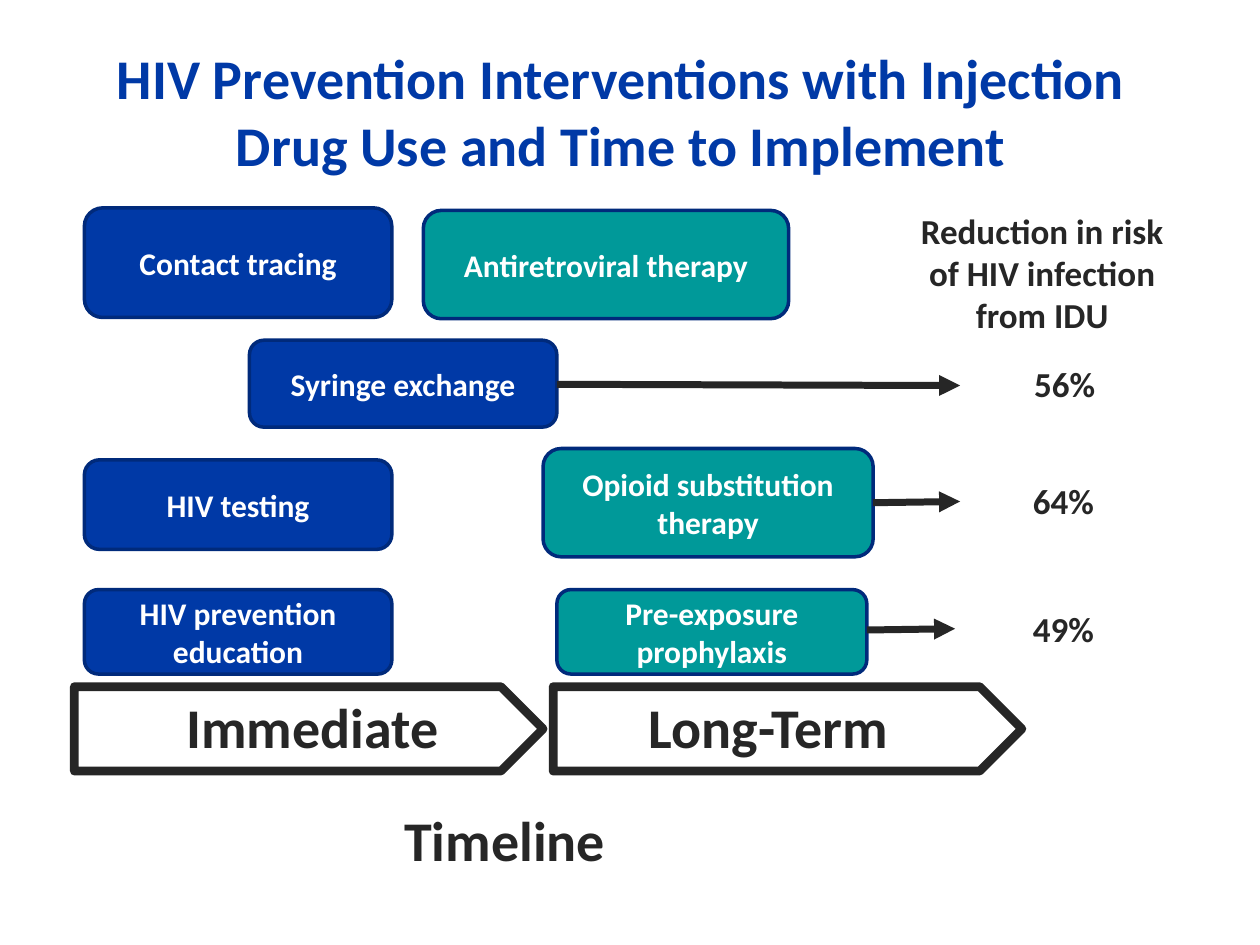
from typing import NamedTuple

from lxml.etree import SubElement
from pptx import Presentation
from pptx.dml.color import RGBColor
from pptx.enum.shapes import MSO_CONNECTOR, MSO_SHAPE
from pptx.enum.text import MSO_ANCHOR, MSO_AUTO_SIZE, PP_ALIGN
from pptx.oxml.ns import qn
from pptx.util import Inches, Pt

BLUE = RGBColor(0x00, 0x39, 0xA6)
NAVY = RGBColor(0x00, 0x2A, 0x7B)
TEAL = RGBColor(0x00, 0x99, 0x99)
DARK = RGBColor(0x26, 0x26, 0x26)
WHITE = RGBColor(0xFF, 0xFF, 0xFF)
FONT = "Calibri"

# The slide is a grid of 100 columns by 75 rows of square cells.
COLS, ROWS = 100, 75
WIDTH, HEIGHT = Inches(10), Inches(7.5)
CELL = WIDTH / COLS


class Area(NamedTuple):
    col: float
    row: float
    cols: float
    rows: float


class Card(NamedTuple):
    text: str
    area: Area
    fill: RGBColor


class Stage(NamedTuple):
    text: str
    col: float
    label: Area


class Effect(NamedTuple):
    """A risk reduction and the arrow that leads to it."""
    text: str
    area: Area
    start: tuple[float, float]
    end: tuple[float, float]


LEFT, WIDE = 6.7, 24.4
CARDS = [
    Card("Syringe exchange", Area(19.8, 27, WIDE, 6.9), BLUE),
    Card("HIV testing", Area(LEFT, 36.5, WIDE, 7.1), BLUE),
    Card("Contact tracing", Area(LEFT, 16.5, WIDE, 8.7), BLUE),
    Card("HIV prevention education", Area(LEFT, 46.8, WIDE, 6.7), BLUE),
    Card("Pre-exposure prophylaxis", Area(44.2, 46.8, 24.6, 6.7), TEAL),
    Card("Antiretroviral therapy", Area(33.6, 16.7, 29, 8.6), TEAL),
    Card("Opioid substitution therapy", Area(43.1, 35.6, 26.2, 8.6), TEAL),
]
STAGE_ROW = 54.5
STAGES = [
    Stage("Immediate", 5.9, Area(13.8, STAGE_ROW, 22.2, 6.4)),
    Stage("Long-Term", 43.9, Area(50.5, STAGE_ROW, 21.6, 6.4)),
]
EFFECTS = [
    Effect("56%", Area(81.1, 28.3, 7.6, 4.4), (44.2, 30.5), (76.2, 30.6)),
    Effect("64%", Area(81, 37.6, 7.6, 4.4), (69.3, 39.9), (76.2, 39.8)),
    Effect("49%", Area(81, 47.7, 7.6, 4.4), (68.8, 50), (75.8, 49.9)),
]


def span(*cells: float) -> list[int]:
    return [round(cell * CELL) for cell in cells]


def write(shape, *lines: str, size: int, color: RGBColor = DARK,
          aligns=(PP_ALIGN.CENTER,), anchor=MSO_ANCHOR.MIDDLE,
          wrap: bool = True) -> None:
    """Fill a shape with bold lines; the last alignment serves the rest."""
    frame = shape.text_frame
    frame.word_wrap = wrap
    frame.vertical_anchor = anchor
    if not wrap:
        frame.auto_size = MSO_AUTO_SIZE.SHAPE_TO_FIT_TEXT
    for i, line in enumerate(lines):
        para = frame.add_paragraph() if i else frame.paragraphs[0]
        para.alignment = aligns[min(i, len(aligns) - 1)]
        run = para.add_run()
        run.text = line
        font = run.font
        font.name, font.size, font.bold = FONT, Pt(size), True
        font.color.rgb = color


def label(slide, area: Area, *lines: str, size: int,
          aligns=(PP_ALIGN.LEFT,)) -> None:
    box = slide.shapes.add_textbox(*span(*area))
    write(box, *lines, size=size, aligns=aligns,
          anchor=MSO_ANCHOR.TOP, wrap=False)


def block(slide, kind, area: Area, line: RGBColor, weight: float):
    shape = slide.shapes.add_shape(kind, *span(*area))
    shape.shadow.inherit = False
    shape.fill.background()
    shape.line.color.rgb = line
    shape.line.width = Pt(weight)
    return shape


def draw_card(slide, card: Card) -> None:
    shape = block(slide, MSO_SHAPE.ROUNDED_RECTANGLE, card.area, NAVY, 2)
    shape.fill.solid()
    shape.fill.fore_color.rgb = card.fill
    write(shape, card.text, size=18, color=WHITE)


def draw_stage(slide, stage: Stage) -> None:
    area = Area(stage.col, STAGE_ROW, 37.2, 6.7)
    block(slide, MSO_SHAPE.PENTAGON, area, DARK, 5)
    label(slide, stage.label, stage.text, size=32)


def draw_effect(slide, effect: Effect) -> None:
    arrow = slide.shapes.add_connector(
        MSO_CONNECTOR.STRAIGHT, *span(*effect.start, *effect.end))
    arrow.line.color.rgb = DARK
    arrow.line.width = Pt(4)
    SubElement(arrow.line._get_or_add_ln(), qn("a:tailEnd"), type="triangle")
    SubElement(arrow._element.spPr, qn("a:effectLst"))
    label(slide, effect.area, effect.text, size=20)


def main() -> None:
    deck = Presentation()
    deck.slide_width, deck.slide_height = WIDTH, HEIGHT
    slide = deck.slides.add_slide(deck.slide_layouts[6])

    title = slide.shapes.add_textbox(*span(4.3, 2.1, 90, 13.4))
    write(title, "HIV Prevention Interventions with Injection "
          "Drug Use and Time to Implement", size=32, color=BLUE)
    for card in CARDS:
        draw_card(slide, card)
    for stage in STAGES:
        draw_stage(slide, stage)
    label(slide, Area(31.1, 63.4, 18.1, 6.4), "Timeline", size=32)
    label(slide, Area(72.1, 16.1, 25.5, 11.1), "Reduction in risk",
          "of HIV infection", "from IDU", size=20,
          aligns=(PP_ALIGN.LEFT, PP_ALIGN.CENTER))
    for effect in EFFECTS:
        draw_effect(slide, effect)
    deck.save("out.pptx")


if __name__ == "__main__":
    main()
